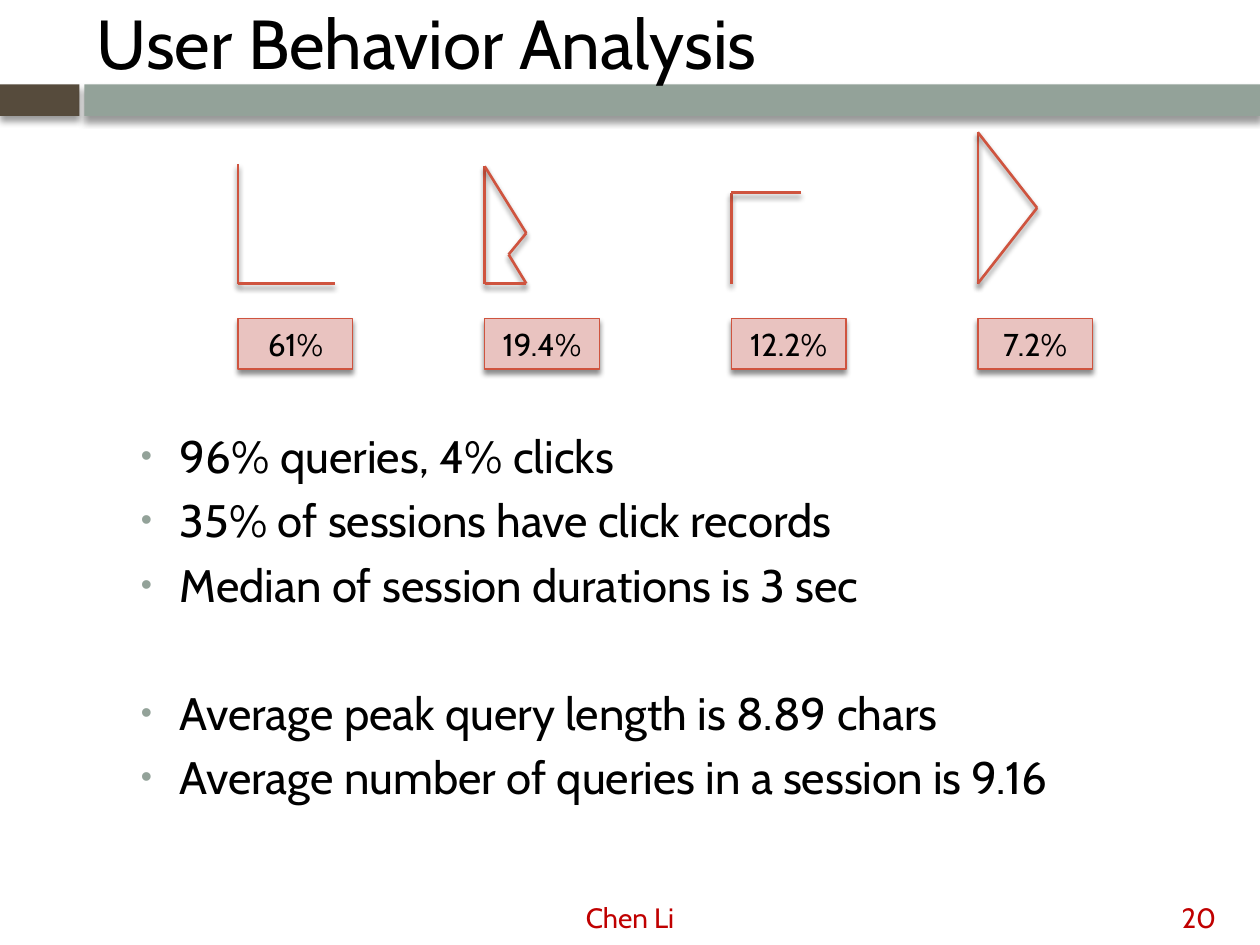
from lxml import etree
from pptx import Presentation
from pptx.dml.color import RGBColor
from pptx.enum.shapes import MSO_CONNECTOR, MSO_SHAPE
from pptx.enum.text import MSO_ANCHOR, PP_ALIGN
from pptx.oxml import parse_xml
from pptx.oxml.ns import nsdecls, qn
from pptx.util import Inches, Pt

LEFT, CENTER, RIGHT = PP_ALIGN.LEFT, PP_ALIGN.CENTER, PP_ALIGN.RIGHT
TOP, MIDDLE = MSO_ANCHOR.TOP, MSO_ANCHOR.MIDDLE
RECT, STRAIGHT = MSO_SHAPE.RECTANGLE, MSO_CONNECTOR.STRAIGHT

FONT = "Cabin"
BLACK = RGBColor(0x00, 0x00, 0x00)
RED = RGBColor(0xC0, 0x00, 0x00)
BROWN = RGBColor(0x56, 0x4B, 0x3C)
SAGE = RGBColor(0x93, 0xA2, 0x99)
CORAL = RGBColor(0xCF, 0x54, 0x3F)
PINK = RGBColor(0xE9, 0xC3, 0xC0)

# Content
TITLE = "User Behavior Analysis"
AUTHOR, PAGE = "Chen Li", "20"
BARS = [(0, 0.63, BROWN), (0.67, 9.33, SAGE)]  # left, width, colour

# Share of sessions and the curve of each pattern: (offset from its left, y)
BASE = 2.25
PATTERNS = [
    ("61%", [(0, 1.3), (0, BASE), (0.77, BASE)]),
    ("19.4%", [(0, BASE), (0, 1.32), (0.33, 1.85), (0.19, 2.02),
               (0.33, BASE), (0, BASE)]),
    ("12.2%", [(0, BASE), (0, 1.53), (0.55, 1.53)]),
    ("7.2%", [(0, BASE), (0, 1.05), (0.47, 1.65), (0, BASE)]),
]
PATTERN_LEFT, PATTERN_STEP = 1.89, 1.957

# Bullets in groups; a wider gap separates the groups
BULLETS = [
    ["96% queries, 4% clicks",
     "35% of sessions have click records",
     "Median of session durations is 3 sec"],
    ["Average peak query length is 8.89 chars",
     "Average number of queries in a session is 9.16"],
]
LINE_GAP, GROUP_GAP = 5.5, 42.2


def add_shadow(shape, alpha, blur, dist):
    sp_pr = shape._element.spPr
    for old in sp_pr.findall(qn("a:effectLst")):
        sp_pr.remove(old)
    sp_pr.append(parse_xml(
        f'<a:effectLst {nsdecls("a")}><a:outerShdw blurRad="{Pt(blur)}" '
        f'dist="{Pt(dist)}" dir="5400000" rotWithShape="0">'
        f'<a:srgbClr val="000000"><a:alpha val="{alpha * 1000}"/></a:srgbClr>'
        '</a:outerShdw></a:effectLst>'))


def add_rect(s, x, y, w, h, fill):
    sp = s.shapes.add_shape(RECT, Inches(x), Inches(y), Inches(w), Inches(h))
    sp.fill.solid()
    sp.fill.fore_color.rgb = fill
    return sp


def style(p, size, color, align=LEFT):
    p.alignment = align
    p.font.name = FONT
    p.font.size = Pt(size)
    p.font.color.rgb = color


def add_box(s, x, y, w, h, anchor=TOP):
    tf = s.shapes.add_textbox(Inches(x), Inches(y), Inches(w), Inches(h)).text_frame
    tf.word_wrap = True
    tf.vertical_anchor = anchor
    return tf


def add_label(s, text, x, y, w, h, size, color, align=LEFT, anchor=TOP):
    p = add_box(s, x, y, w, h, anchor).paragraphs[0]
    p.text = text
    style(p, size, color, align)


def add_bullet(p):
    p_pr = p._p.get_or_add_pPr()
    p_pr.set("marL", str(Inches(0.66)))
    p_pr.set("indent", str(Inches(-0.31)))
    color = etree.SubElement(p_pr, qn("a:buClr"))
    etree.SubElement(color, qn("a:srgbClr"), val=str(SAGE))
    etree.SubElement(p_pr, qn("a:buSzPct"), val="70000")
    etree.SubElement(p_pr, qn("a:buFont"), typeface="Arial")
    etree.SubElement(p_pr, qn("a:buChar"), char="•")


def add_pattern(s, x, share, points):
    for (x1, y1), (x2, y2) in zip(points, points[1:]):
        line = s.shapes.add_connector(STRAIGHT, Inches(x + x1), Inches(y1),
                                      Inches(x + x2), Inches(y2))
        line.line.color.rgb = CORAL
        line.line.width = Pt(1.5)
        add_shadow(line, 45, 3, 2.4)
    sp = add_rect(s, x, 2.53, 0.91, 0.4, PINK)
    sp.line.color.rgb = CORAL
    sp.line.width = Pt(0.79)
    add_shadow(sp, 45, 3, 2.4)
    sp.text_frame.vertical_anchor = MIDDLE
    p = sp.text_frame.paragraphs[0]
    p.text = share
    style(p, 18, BLACK, CENTER)


def main():
    prs = Presentation()
    prs.slide_width, prs.slide_height = Inches(10), Inches(7.5)
    s = prs.slides.add_slide(prs.slide_layouts[6])

    # Header bars and title
    for x, w, color in BARS:
        bar = add_rect(s, x, 0.67, w, 0.25, color)
        bar.line.fill.background()
        add_shadow(bar, 40, 4, 3)
    add_label(s, TITLE, 0.67, 0, 8, 0.67, 39.6, BLACK, anchor=MIDDLE)

    # Session patterns
    for i, (share, points) in enumerate(PATTERNS):
        add_pattern(s, PATTERN_LEFT + i * PATTERN_STEP, share, points)

    # Bullets
    tf = add_box(s, 0.67, 3.35, 9.16, 2.82)
    for g, group in enumerate(BULLETS):
        for i, text in enumerate(group):
            first = g == i == 0
            p = tf.paragraphs[0] if first else tf.add_paragraph()
            p.text = text
            add_bullet(p)
            style(p, 26, BLACK)
            if not first:
                p.space_before = Pt(LINE_GAP if i else GROUP_GAP)

    # Footer
    add_label(s, PAGE, 7.42, 7.1, 2.33, 0.4, 16, RED, RIGHT)
    add_label(s, AUTHOR, 3.25, 7.1, 3.5, 0.4, 16, RED, CENTER)

    prs.save("out.pptx")


if __name__ == "__main__":
    main()
